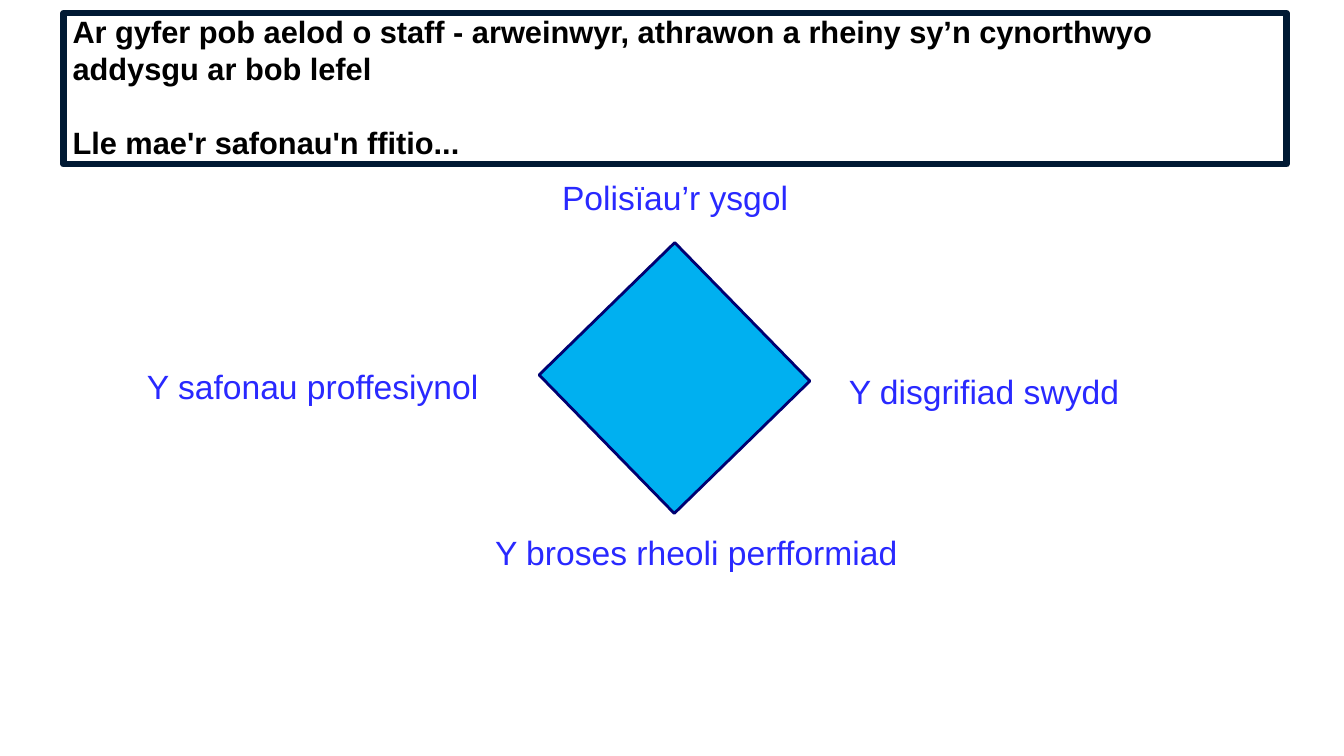
from pptx import Presentation
from pptx.dml import color
from pptx.enum import shapes, text
from pptx.util import Inches, Pt

LEFT, CENTER = text.PP_ALIGN.LEFT, text.PP_ALIGN.CENTER


def rgb(value):
    return color.RGBColor.from_string(value)


def write(p, words, size=24, hex_color="2929FF", bold=False, align=LEFT, before=0):
    p.alignment = align
    p.space_before = Pt(before)
    r = p.add_run()
    r.text = words
    r.font.name = "Arial"
    r.font.size = Pt(size)
    r.font.bold = bold
    r.font.color.rgb = rgb(hex_color)


def add_rect(slide, box, line, width, fill=None):
    sp = slide.shapes.add_shape(
        shapes.MSO_SHAPE.RECTANGLE, *(Inches(v) for v in box))
    sp.shadow.inherit = False
    if fill:
        sp.fill.solid()
        sp.fill.fore_color.rgb = rgb(fill)
    else:
        sp.fill.background()
    sp.line.color.rgb = rgb(line)
    sp.line.width = Pt(width)
    return sp


def add_heading(slide, box):
    sp = add_rect(slide, box, "001933", 4.5)
    tf = sp.text_frame
    tf.word_wrap = True
    tf.vertical_anchor = text.MSO_ANCHOR.MIDDLE
    tf.margin_top = tf.margin_right = 0
    tf.margin_left = Inches(0.09)
    tf.margin_bottom = Inches(0.04)
    lines = [
        ("Ar gyfer pob aelod o staff - arweinwyr, athrawon a rheiny "
         "sy’n cynorthwyo", 0),
        ("addysgu ar bob lefel", 0),
        ("Lle mae'r safonau'n ffitio...", 27),
    ]
    for i, (words, before) in enumerate(lines):
        p = tf.add_paragraph() if i else tf.paragraphs[0]
        write(p, words, size=22, hex_color="000000", bold=True, before=before)


def add_label(slide, words, box, align=LEFT):
    tf = slide.shapes.add_textbox(*(Inches(v) for v in box)).text_frame
    tf.word_wrap = True
    write(tf.paragraphs[0], words, align=align)


def add_diamond_diagram(slide, box):
    """Tilted square with one label beyond each corner."""
    x, y, w, h = box
    labels = [
        ("Polisïau’r ysgol", 3.71, 0, 3.25, CENTER),
        ("Y disgrifiad swydd", 6.96, 1.92, 4.34, LEFT),
        ("Y safonau proffesiynol", 0, 1.87, 3.7, LEFT),
        ("Y broses rheoli perfformiad", 2.74, 3.52, 5.61, CENTER),
    ]
    for words, dx, dy, width, align in labels:
        add_label(slide, words, (x + dx, y + dy, width, 0.5), align)
    side_w, side_h = 1.88, 1.92
    diamond = (x + 5.33 - side_w / 2, y + (h - side_h) / 2 + 0.03, side_w, side_h)
    add_rect(slide, diamond, "000071", 2, fill="00B0F0").rotation = 315.7


def main():
    prs = Presentation()
    prs.slide_width, prs.slide_height = Inches(13.33), Inches(7.5)
    slide = prs.slides.add_slide(prs.slide_layouts[6])
    add_heading(slide, (0.63, 0.13, 12.13, 1.5))
    add_diamond_diagram(slide, (1.36, 1.71, 11.3, 4.02))
    prs.save("out.pptx")


if __name__ == "__main__":
    main()
